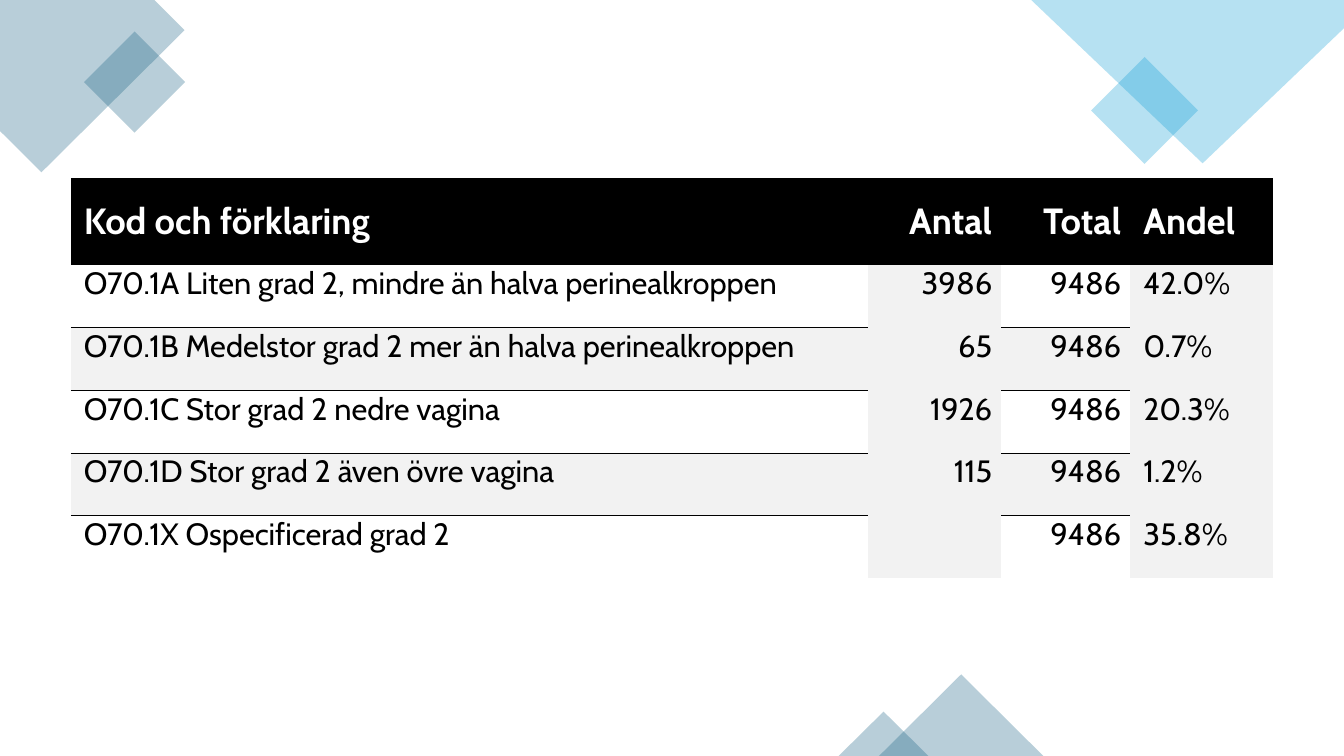
from dataclasses import dataclass

import pptx
import pptx.dml.color
import pptx.dml.fill
import pptx.enum.shapes
import pptx.enum.text
import pptx.oxml
import pptx.oxml.ns
import pptx.shapes.autoshape
import pptx.shapes.shapetree
import pptx.table
import pptx.util

RGBColor = pptx.dml.color.RGBColor
SHAPE = pptx.enum.shapes.MSO_SHAPE
ALIGN = pptx.enum.text.PP_ALIGN
ANCHOR = pptx.enum.text.MSO_ANCHOR

PETROL = RGBColor(0x15, 0x60, 0x82)
SKY = RGBColor(0x0F, 0x9E, 0xD5)
BLACK = RGBColor(0, 0, 0)
WHITE = RGBColor(0xFF, 0xFF, 0xFF)
BAND_GREY = RGBColor(0xF2, 0xF2, 0xF2)

FONT = "Cabin"
OPACITY = 30
NO_STYLE_NO_GRID = "{2D5ABB26-0587-4C30-8999-92F81FD0307C}"
SLIDE_WIDTH = pptx.util.Inches(13.33)
SLIDE_HEIGHT = pptx.util.Inches(7.5)


@dataclass(frozen=True)
class Ornament:
    """A preset shape; its box is in percent of the slide's size."""
    kind: SHAPE
    left: float
    top: float
    width: float
    height: float
    color: RGBColor
    rotation: float = 0


@dataclass(frozen=True)
class Corner:
    """A polygon; its points are in percent of the slide's size."""
    points: tuple[tuple[float, float], ...]
    color: RGBColor


@dataclass(frozen=True)
class Column:
    heading: str
    width: float
    align: ALIGN
    shaded: bool


CORNERS = [
    Corner(((11.48, 0), (0, 0), (0, 17.33), (3.08, 22.8), (13.73, 4)), PETROL),
    Corner(((100, 0), (76.73, 0), (89.48, 21.6), (100, 3.73)), SKY),
]
ORNAMENTS = [
    Ornament(SHAPE.RECTANGLE, 7.35, 6.13, 5.33, 9.47, PETROL, 315),
    Ornament(SHAPE.RECTANGLE, 82.35, 9.6, 5.63, 10, SKY, 315),
    Ornament(SHAPE.ISOSCELES_TRIANGLE, 65.4, 89.2, 12.23, 10.8, PETROL),
    Ornament(SHAPE.ISOSCELES_TRIANGLE, 62.4, 94.13, 6.68, 5.87, PETROL),
]

TABLE_LEFT, TABLE_TOP = 5.27, 23.6
HEADER_HEIGHT, ROW_HEIGHT = 11.47, 8.29
COLUMNS = [
    Column("Kod och förklaring", 59.33, ALIGN.LEFT, False),
    Column("Antal", 9.9, ALIGN.RIGHT, True),
    Column("Total", 9.6, ALIGN.RIGHT, False),
    Column("Andel", 10.65, ALIGN.LEFT, True),
]
DIAGNOSES = [
    ("O70.1A Liten grad 2, mindre än halva perinealkroppen", "3986", "9486", "42.0%"),
    ("O70.1B Medelstor grad 2 mer än halva perinealkroppen", "65", "9486", "0.7%"),
    ("O70.1C Stor grad 2 nedre vagina", "1926", "9486", "20.3%"),
    ("O70.1D Stor grad 2 även övre vagina", "115", "9486", "1.2%"),
    ("O70.1X Ospecificerad grad 2", "", "9486", "35.8%"),
]


def across(percent: float) -> int:
    return round(SLIDE_WIDTH * percent / 100)


def down(percent: float) -> int:
    return round(SLIDE_HEIGHT * percent / 100)


def paint(shape: pptx.shapes.autoshape.Shape, color: RGBColor) -> None:
    """Give a shape a translucent fill without line or shadow."""
    shape.shadow.inherit = False
    shape.line.fill.background()
    shape.fill.solid()
    shape.fill.fore_color.rgb = color
    fill_color = next(shape.element.iter(pptx.oxml.ns.qn("a:srgbClr")))
    alpha = fill_color.makeelement(pptx.oxml.ns.qn("a:alpha"), {"val": str(OPACITY * 1000)})
    fill_color.append(alpha)


def draw_corner(shapes: pptx.shapes.shapetree.SlideShapes, corner: Corner) -> None:
    start, *rest = [(across(x), down(y)) for x, y in corner.points]
    outline = shapes.build_freeform(*start)
    outline.add_line_segments(rest, close=True)
    paint(outline.convert_to_shape(), corner.color)


def draw_ornament(shapes: pptx.shapes.shapetree.SlideShapes, ornament: Ornament) -> None:
    shape = shapes.add_shape(
        ornament.kind, across(ornament.left), down(ornament.top),
        across(ornament.width), down(ornament.height))
    shape.rotation = ornament.rotation
    paint(shape, ornament.color)


def add_rule(cell: pptx.table._Cell, side: str) -> None:
    """Draw a thin black border; side is T for top or B for bottom."""
    namespace = pptx.oxml.ns.nsdecls("a")
    rule = pptx.oxml.parse_xml(
        f'<a:ln{side} {namespace} w="12700"><a:solidFill>'
        f'<a:srgbClr val="{BLACK}"/></a:solidFill></a:ln{side}>')
    cell._tc.get_or_add_tcPr().insert(0, rule)


def fill_cell(cell: pptx.table._Cell, text: str, align: ALIGN, is_header: bool) -> None:
    cell.margin_left = pptx.util.Inches(0.13)
    cell.margin_right = pptx.util.Inches(0.09)
    cell.margin_top = pptx.util.Inches(0.18 if is_header else 0)
    cell.margin_bottom = pptx.util.Inches(0.18)
    cell.vertical_anchor = ANCHOR.MIDDLE if is_header else ANCHOR.TOP
    cell.text = text
    paragraph = cell.text_frame.paragraphs[0]
    paragraph.alignment = align
    paragraph.space_before = paragraph.space_after = pptx.util.Pt(1.8)
    paragraph.font.name = FONT
    paragraph.font.size = pptx.util.Pt(26 if is_header else 22)
    paragraph.font.bold = is_header
    paragraph.font.color.rgb = WHITE if is_header else BLACK


def shade_cell(cell: pptx.table._Cell, color: RGBColor | None) -> None:
    if color is None:
        cell.fill.background()
    else:
        cell.fill.solid()
        cell.fill.fore_color.rgb = color


def draw_table(shapes: pptx.shapes.shapetree.SlideShapes) -> None:
    rows = [tuple(column.heading for column in COLUMNS), *DIAGNOSES]
    frame = shapes.add_table(
        len(rows), len(COLUMNS), across(TABLE_LEFT), down(TABLE_TOP),
        across(sum(column.width for column in COLUMNS)),
        down(HEADER_HEIGHT + ROW_HEIGHT * len(DIAGNOSES)))
    diagnoses = frame.table
    diagnoses.horz_banding = False
    next(frame.element.iter(pptx.oxml.ns.qn("a:tableStyleId"))).text = NO_STYLE_NO_GRID

    for index, column in enumerate(COLUMNS):
        diagnoses.columns[index].width = across(column.width)
    for row, texts in enumerate(rows):
        is_header = row == 0
        is_band = not is_header and row % 2 == 0
        diagnoses.rows[row].height = down(HEADER_HEIGHT if is_header else ROW_HEIGHT)
        for index, (column, text) in enumerate(zip(COLUMNS, texts)):
            cell = diagnoses.cell(row, index)
            fill_cell(cell, text, column.align, is_header)
            if is_header:
                shade_cell(cell, BLACK)
            else:
                shade_cell(cell, BAND_GREY if is_band or column.shaded else None)
                if not column.shaded and row < len(DIAGNOSES):
                    add_rule(cell, "T" if is_band else "B")


def main() -> None:
    presentation = pptx.Presentation()
    presentation.slide_width = SLIDE_WIDTH
    presentation.slide_height = SLIDE_HEIGHT
    slide = presentation.slides.add_slide(presentation.slide_layouts[6])
    for corner in CORNERS:
        draw_corner(slide.shapes, corner)
    for ornament in ORNAMENTS:
        draw_ornament(slide.shapes, ornament)
    draw_table(slide.shapes)
    presentation.save("out.pptx")


if __name__ == "__main__":
    main()
